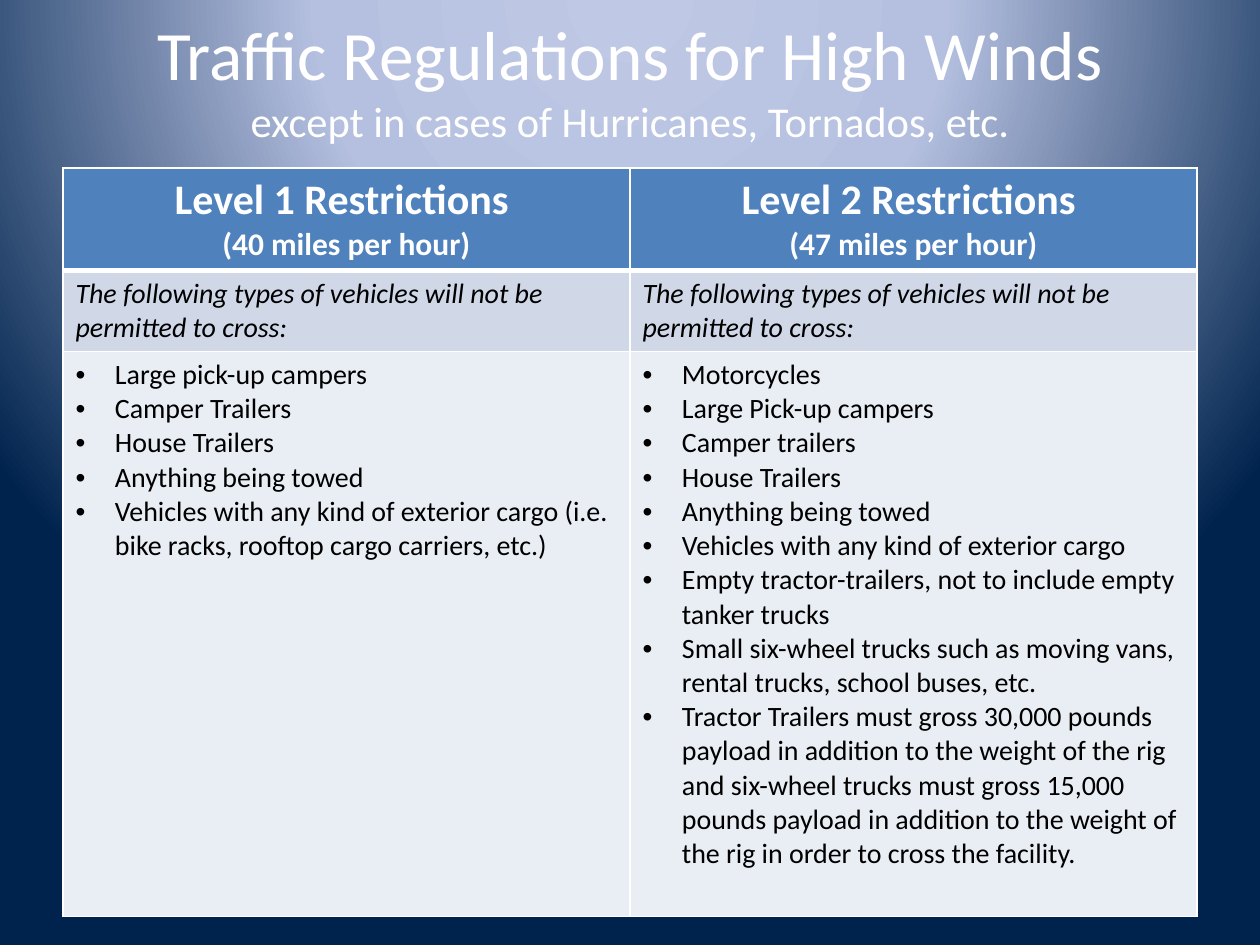
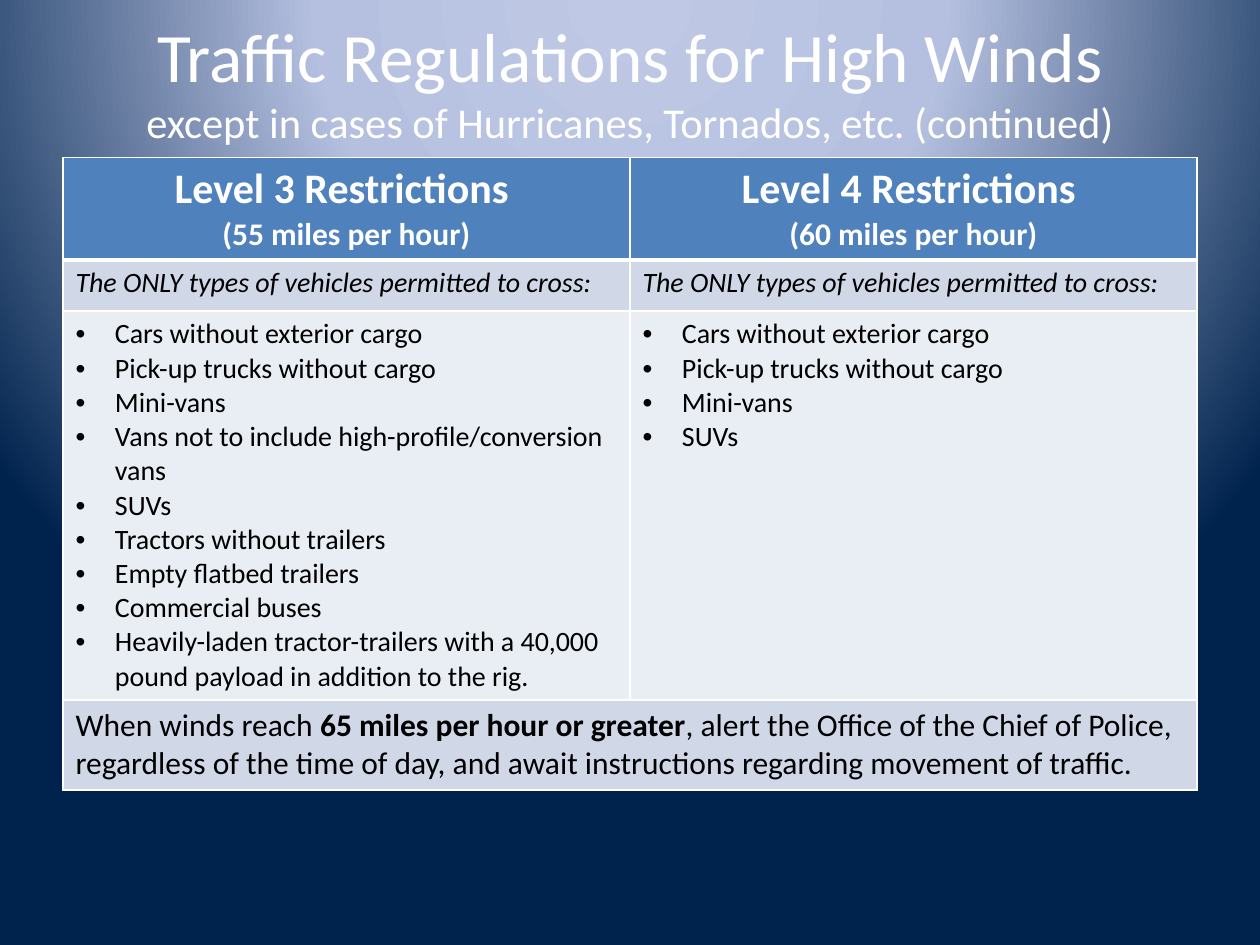
from copy import deepcopy

from pptx import Presentation
from pptx.dml.color import RGBColor
from pptx.enum.text import MSO_ANCHOR, MSO_AUTO_SIZE, PP_ALIGN
from pptx.oxml import parse_xml
from pptx.oxml.ns import nsdecls, qn
from pptx.util import Pt

FONT = "Calibri"
COLORS = {
    "glow": "BFC9E5",
    "haze": "B5C0E0",
    "navy": "00234D",
    "header": "4F81BD",
    "band": "D0D8E8",
    "pale": "E9EDF4",
    "white": "FFFFFF",
    "black": "000000",
}
TITLE = "Traffic Regulations for High Winds"
BANNED = "The following types of vehicles will not be permitted to cross:"
ALLOWED = "The ONLY types of vehicles permitted to cross:"
MARGIN, TABLE_WIDTH = 36, 648
HEADER_HEIGHT = 58.3
BULLET_INDENT = 22.5


def rgb(name):
    return RGBColor.from_string(COLORS[name])


def add_bullet(paragraph):
    props = paragraph._p.get_or_add_pPr()
    props.set("marL", str(Pt(BULLET_INDENT)))
    props.set("indent", str(-Pt(BULLET_INDENT)))
    props.append(parse_xml(f'<a:buFont {nsdecls("a")} typeface="Arial"/>'))
    props.append(parse_xml(f'<a:buChar {nsdecls("a")} char="•"/>'))


def write(frame, paragraphs, size=16, color="black", bold=False, italic=False,
          align=PP_ALIGN.LEFT, bullet=False):
    """Fill a frame; a paragraph is a list of (text, overrides), and a final newline breaks the line."""
    for index, runs in enumerate(paragraphs):
        paragraph = frame.add_paragraph() if index else frame.paragraphs[0]
        paragraph.alignment = align
        if bullet:
            add_bullet(paragraph)
        for text, overrides in runs:
            style = {"size": size, "bold": bold} | overrides
            run = paragraph.add_run()
            run.text = text.rstrip("\n")
            font = run.font
            font.name, font.size = FONT, Pt(style["size"])
            font.bold, font.italic = style["bold"], italic
            font.color.rgb = rgb(color)
            if text.endswith("\n"):
                paragraph.add_line_break()
                paragraph._p[-1].append(deepcopy(run._r.rPr))


class WindDeck:
    def __init__(self):
        self.deck = Presentation()
        self.deck.slide_width, self.deck.slide_height = Pt(720), Pt(540)
        self.slide = None
        self.paint_background()

    def paint_background(self):
        master = self.deck.slide_master
        master.background.fill.solid()
        stops = "".join(
            f'<a:gs pos="{percent * 1000}"><a:srgbClr val="{COLORS[name]}"/></a:gs>'
            for percent, name in ((0, "glow"), (40, "haze"), (100, "navy")))
        gradient = parse_xml(
            f'<a:gradFill {nsdecls("a")} rotWithShape="1"><a:gsLst>{stops}</a:gsLst>'
            '<a:path path="circle"><a:fillToRect l="50000" t="-80000" r="50000" b="180000"/>'
            '</a:path></a:gradFill>')
        plain = next(master.element.iter(qn("p:bgPr"))).find(qn("a:solidFill"))
        plain.getparent().replace(plain, gradient)

    def add_slide(self, subtitle, top=0):
        self.slide = self.deck.slides.add_slide(self.deck.slide_layouts[5])
        title = self.slide.shapes.title
        title.left, title.top, title.width, title.height = map(Pt, (MARGIN, top, TABLE_WIDTH, 90))
        frame = title.text_frame
        frame.word_wrap, frame.auto_size = True, MSO_AUTO_SIZE.NONE
        frame.vertical_anchor = MSO_ANCHOR.MIDDLE
        write(frame, [[(TITLE + "\n", {"size": 39.6}), (subtitle, {"size": 24.3})]],
              color="white", align=PP_ALIGN.CENTER)

    def style_cell(self, cell, fill, bottom=1):
        props = cell._tc.get_or_add_tcPr()
        for side, width in (("L", 1), ("R", 1), ("T", 1), ("B", bottom)):
            props.append(parse_xml(
                f'<a:ln{side} {nsdecls("a")} w="{Pt(width)}"><a:solidFill>'
                f'<a:srgbClr val="{COLORS["white"]}"/></a:solidFill></a:ln{side}>'))
        cell.fill.solid()
        cell.fill.fore_color.rgb = rgb(fill)

    def add_restrictions(self, top, heights, intro, levels, alert=None):
        """Add one column per (level, miles per hour, vehicles), with an optional full-width alert row."""
        row_heights = [HEADER_HEIGHT, *heights]
        table = self.slide.shapes.add_table(
            len(row_heights), len(levels), Pt(MARGIN), Pt(top),
            Pt(TABLE_WIDTH), Pt(sum(row_heights))).table
        for row, height in zip(table.rows, row_heights):
            row.height = Pt(height)
        fills = ("header", "band", "pale", "band")
        for row, fill in enumerate(fills[:len(row_heights)]):
            for column in range(len(levels)):
                self.style_cell(table.cell(row, column), fill, bottom=1 if row else 3)
        for column, (level, speed, vehicles) in enumerate(levels):
            heading, rule, listing = (table.cell(row, column).text_frame for row in range(3))
            write(heading, [[(f"Level {level} Restrictions \n", {"size": 24}),
                             (f"({speed} miles per hour)", {})]],
                  size=18, color="white", bold=True, align=PP_ALIGN.CENTER)
            write(rule, [[(intro, {})]], italic=True)
            write(listing, [[(vehicle, {})] for vehicle in vehicles], bullet=True)
        if alert:
            notice = table.cell(3, 0)
            notice.merge(table.cell(3, len(levels) - 1))
            write(notice.text_frame, [alert], size=18)


def main():
    wind = WindDeck()

    wind.add_slide("except in cases of Hurricanes, Tornados, etc.")
    wind.add_restrictions(96, [46.3, 322.9], BANNED, [
        (1, 40, [
            "Large pick-up campers",
            "Camper Trailers",
            "House Trailers",
            "Anything being towed",
            "Vehicles with any kind of exterior cargo (i.e. bike racks, rooftop cargo carriers, etc.)",
        ]),
        (2, 47, [
            "Motorcycles",
            "Large Pick-up campers",
            "Camper trailers",
            "House Trailers",
            "Anything being towed",
            "Vehicles with any kind of exterior cargo",
            "Empty tractor-trailers, not to include empty tanker trucks",
            "Small six-wheel trucks such as moving vans, rental trucks, school buses, etc.",
            "Tractor Trailers must gross 30,000 pounds payload in addition to the weight of the rig "
            "and six-wheel trucks must gross 15,000 pounds payload in addition to the weight of "
            "the rig in order to cross the facility.",
        ]),
    ])

    wind.add_slide("except in cases of Hurricanes, Tornados, etc. (continued)", top=0.7)
    wind.add_restrictions(90, [29.2, 222.3, 51.4], ALLOWED, [
        (3, 55, [
            "Cars without exterior cargo",
            "Pick-up trucks without cargo",
            "Mini-vans",
            "Vans not to include high-profile/conversion vans",
            "SUVs",
            "Tractors without trailers",
            "Empty flatbed trailers",
            "Commercial buses",
            "Heavily-laden tractor-trailers with a 40,000 pound payload in addition to the rig.",
        ]),
        (4, 60, [
            "Cars without exterior cargo",
            "Pick-up trucks without cargo",
            "Mini-vans",
            "SUVs",
        ]),
    ], alert=[
        ("When winds reach ", {}),
        ("65 miles per hour or greater", {"bold": True}),
        (", alert the Office of the Chief of Police, regardless of the time of day, "
         "and await instructions regarding movement of traffic.", {}),
    ])

    wind.deck.save("out.pptx")


if __name__ == "__main__":
    main()
